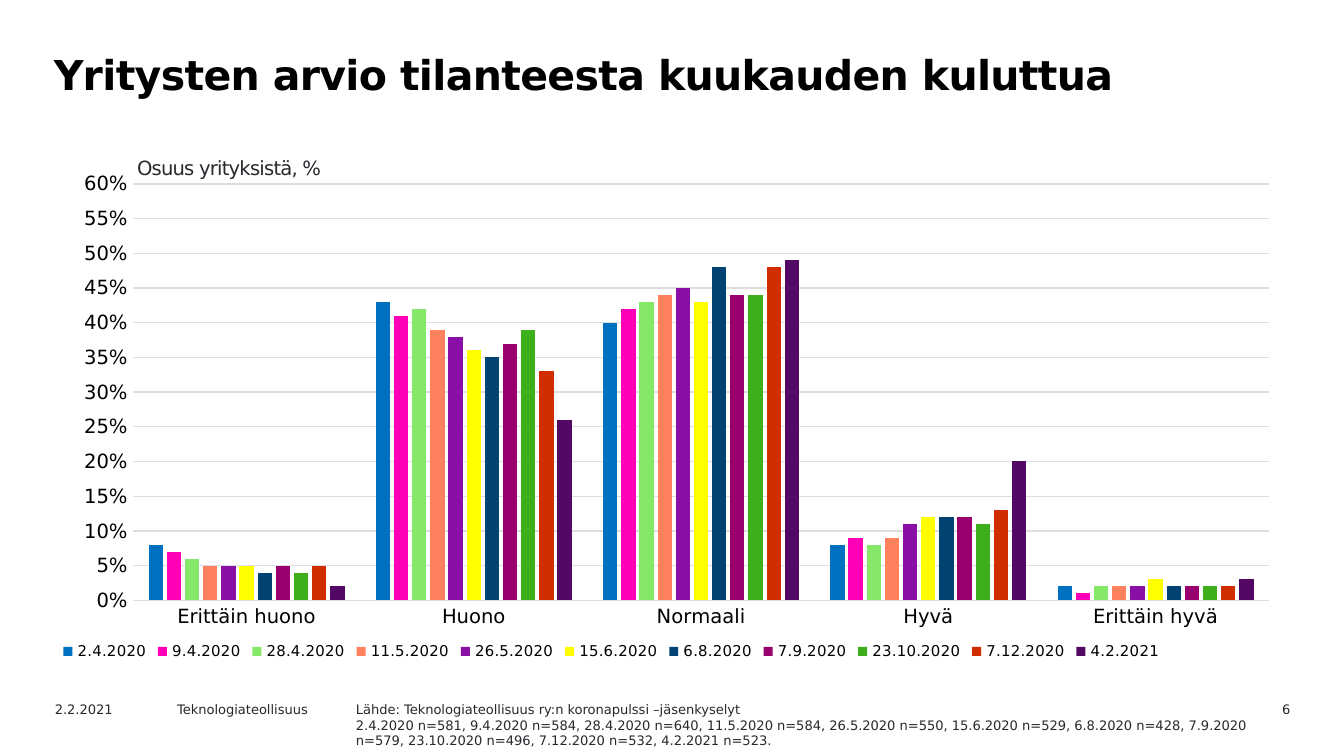
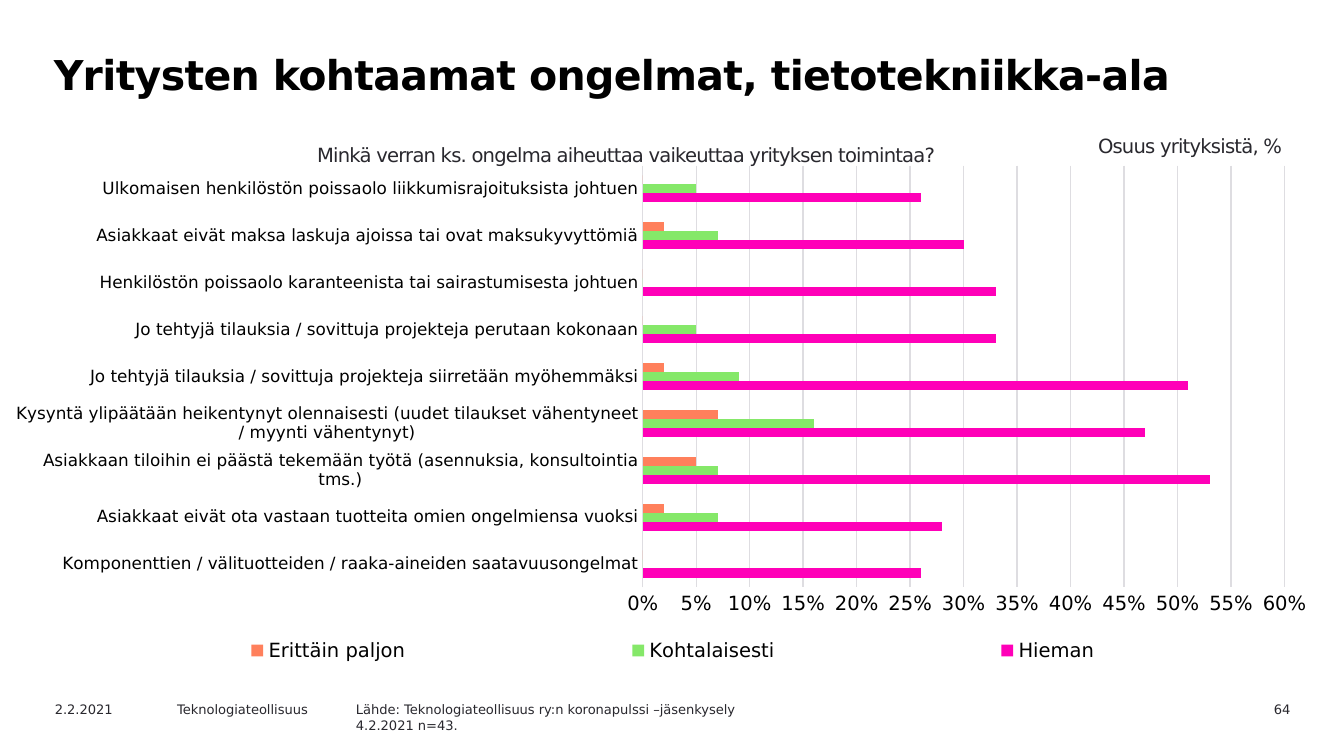
"""Build two survey slides, each with a title, a clustered bar chart and a footer."""
from lxml import etree
from pptx import Presentation
from pptx.chart.data import CategoryChartData
from pptx.dml.color import RGBColor
from pptx.enum import chart as ce, text as te
from pptx.oxml.ns import qn
from pptx.util import Inches, Pt

FONT = "DejaVu Sans"
COLORS = {
    "black": "000000", "ink": "29282E", "grid": "DEDDE1", "blue": "0070C0",
    "pink": "FF00B8", "mint": "85E869", "coral": "FF805C", "violet": "8A0FA6",
    "yellow": "FFFF00", "navy": "004373", "plum": "99006E", "green": "3CAF1B",
    "red": "D02E00", "purple": "530964",
}
DATE, SENDER = "2.2.2021", "Teknologiateollisuus"
SHARE = "Osuus yrityksistä, %"
FOOTER_TOP, FOOTER_HEIGHT = 5.17, 0.18

SLIDES = [
    {
        "title": "Yritysten arvio tilanteesta kuukauden kuluttua",
        "number": "6",
        "source": [
            "Lähde: Teknologiateollisuus ry:n koronapulssi –jäsenkyselyt",
            "2.4.2020 n=581, 9.4.2020 n=584, 28.4.2020 n=640, 11.5.2020 n=584, "
            "26.5.2020 n=550, 15.6.2020 n=529, 6.8.2020 n=428, 7.9.2020 n=579, "
            "23.10.2020 n=496, 7.12.2020 n=532, 4.2.2021 n=523.",
        ],
        "source_size": (6.86, 0.4),
        "labels": [(SHARE, (0.98, 1.12, 3.39, 0.26))],
        "chart": {
            "type": ce.XL_CHART_TYPE.COLUMN_CLUSTERED,
            "at": (0.42, 1.21, 9.18, 3.87),
            "plot": (0.062, 0.041, 0.921, 0.801),
            "legend": (0, 0.91, 0.9, 0.06),
            "overlap": -27, "category_size": 10.5, "legend_size": 8,
            "categories": ["Erittäin huono", "Huono", "Normaali", "Hyvä", "Erittäin hyvä"],
            "series": [
                ("2.4.2020", "blue", (0.08, 0.43, 0.4, 0.08, 0.02)),
                ("9.4.2020", "pink", (0.07, 0.41, 0.42, 0.09, 0.01)),
                ("28.4.2020", "mint", (0.06, 0.42, 0.43, 0.08, 0.02)),
                ("11.5.2020", "coral", (0.05, 0.39, 0.44, 0.09, 0.02)),
                ("26.5.2020", "violet", (0.05, 0.38, 0.45, 0.11, 0.02)),
                ("15.6.2020", "yellow", (0.05, 0.36, 0.43, 0.12, 0.03)),
                ("6.8.2020", "navy", (0.04, 0.35, 0.48, 0.12, 0.02)),
                ("7.9.2020", "plum", (0.05, 0.37, 0.44, 0.12, 0.02)),
                ("23.10.2020", "green", (0.04, 0.39, 0.44, 0.11, 0.02)),
                ("7.12.2020", "red", (0.05, 0.33, 0.48, 0.13, 0.02)),
                ("4.2.2021", "purple", (0.02, 0.26, 0.49, 0.2, 0.03)),
            ],
        },
    },
    {
        "title": "Yritysten kohtaamat ongelmat, tietotekniikka-ala",
        "number": "64",
        "source": [
            "Lähde: Teknologiateollisuus ry:n koronapulssi –jäsenkysely",
            "4.2.2021 n=43.",
        ],
        "source_size": (5.75, 0.45),
        "labels": [
            (SHARE, (8.13, 0.96, 1.57, 0.26)),
            ("Minkä verran ks. ongelma aiheuttaa vaikeuttaa yrityksen toimintaa?",
             (2.32, 1.02, 4.8, 0.26)),
        ],
        "chart": {
            "type": ce.XL_CHART_TYPE.BAR_CLUSTERED,
            "at": (0.12, 1.08, 9.76, 4),
            "plot": (0.477, 0.038, 0.49, 0.785),
            "legend": (0.01, 0.9, 0.98, 0.08),
            "overlap": 0, "category_size": 9, "legend_size": 10.5,
            "categories": [
                "Komponenttien / välituotteiden / raaka-aineiden saatavuusongelmat",
                "Asiakkaat eivät ota vastaan tuotteita omien ongelmiensa vuoksi",
                "Asiakkaan tiloihin ei päästä tekemään työtä (asennuksia, konsultointia tms.)",
                "Kysyntä ylipäätään heikentynyt olennaisesti "
                "(uudet tilaukset vähentyneet / myynti vähentynyt)",
                "Jo tehtyjä tilauksia / sovittuja projekteja siirretään myöhemmäksi",
                "Jo tehtyjä tilauksia / sovittuja projekteja perutaan kokonaan",
                "Henkilöstön poissaolo karanteenista tai sairastumisesta johtuen",
                "Asiakkaat eivät maksa laskuja ajoissa tai ovat maksukyvyttömiä",
                "Ulkomaisen henkilöstön poissaolo liikkumisrajoituksista johtuen",
            ],
            "series": [
                ("Hieman", "pink", (0.26, 0.28, 0.53, 0.47, 0.51, 0.33, 0.33, 0.3, 0.26)),
                ("Kohtalaisesti", "mint", (0, 0.07, 0.07, 0.16, 0.09, 0.05, 0, 0.07, 0.05)),
                ("Erittäin paljon", "coral", (0, 0.02, 0.05, 0.07, 0.02, 0, 0, 0.02, 0)),
            ],
        },
    },
]


def rgb(name):
    return RGBColor.from_string(COLORS[name])


def style_font(font, size, color, bold=False):
    font.name, font.size, font.bold = FONT, Pt(size), bold
    font.color.rgb = rgb(color)


def fill_text(tf, lines, size, color="ink", bold=False, spacing=0, align=te.PP_ALIGN.LEFT):
    tf.text = "\n".join(lines)
    tf.word_wrap = True
    tf.auto_size = te.MSO_AUTO_SIZE.NONE
    tf.vertical_anchor = te.MSO_ANCHOR.TOP
    for p in tf.paragraphs:
        p.alignment = align
        for r in p.runs:
            style_font(r.font, size, color, bold)
            if spacing:
                r.font._element.set("spc", str(spacing))


def add_text(s, at, lines, size=7, **style):
    tf = s.shapes.add_textbox(*map(Inches, at)).text_frame
    fill_text(tf, lines, size, **style)
    return tf


def add_title(s, title):
    sp = s.shapes.title
    sp.left, sp.top, sp.width, sp.height = map(Inches, (0.28, 0.31, 8.74, 0.71))
    fill_text(sp.text_frame, [title], 22, "black", bold=True, spacing=-34)
    p = sp.text_frame.paragraphs[0]
    p.line_spacing = Pt(27)
    p._p.get_or_add_pPr().set("marL", str(Inches(0.02)))


def add_label(s, label, at):
    tf = add_text(s, at, [label], 10.5, spacing=-40)
    tf.margin_left = tf.margin_right = tf.margin_top = tf.margin_bottom = Inches(0.04)
    tf.auto_size = te.MSO_AUTO_SIZE.SHAPE_TO_FIT_TEXT


def add_footer(s, number, source, source_size):
    for left, width, line, align in (
        (8.76, 0.94, number, te.PP_ALIGN.RIGHT),
        (0.31, 1, DATE, te.PP_ALIGN.LEFT),
        (1.22, 1.42, SENDER, te.PP_ALIGN.LEFT),
    ):
        add_text(s, (left, FOOTER_TOP, width, FOOTER_HEIGHT), [line], align=align)
    add_text(s, (2.55, FOOTER_TOP, *source_size), source)


def set_layout(parent, index, box, inner=False):
    for old in parent.findall(qn("c:layout")):
        parent.remove(old)
    layout = etree.Element(qn("c:layout"))
    manual = etree.SubElement(layout, qn("c:manualLayout"))
    settings = [("layoutTarget", "inner")] if inner else []
    settings += [("xMode", "edge"), ("yMode", "edge"), *zip("xywh", box)]
    for tag, value in settings:
        etree.SubElement(manual, qn(f"c:{tag}")).set("val", str(value))
    parent.insert(index, layout)


def style_axis(axis, size):
    axis.major_tick_mark = axis.minor_tick_mark = ce.XL_TICK_MARK.NONE
    style_font(axis.tick_labels.font, size, "black")


def style_line(line):
    line.color.rgb = rgb("grid")
    line.width = Pt(0.75)


def add_bars(s, spec):
    data = CategoryChartData(number_format="0%")
    data.categories = spec["categories"]
    for name, _, values in spec["series"]:
        data.add_series(name, values)
    chart = s.shapes.add_chart(spec["type"], *map(Inches, spec["at"]), data).chart
    chart.has_title = False
    style_font(chart.font, 10, "ink")

    plot = chart.plots[0]
    plot.gap_width, plot.overlap, plot.vary_by_categories = 219, spec["overlap"], False
    for series, (_, color, _) in zip(plot.series, spec["series"]):
        series.format.fill.solid()
        series.format.fill.fore_color.rgb = rgb(color)

    style_axis(chart.category_axis, spec["category_size"])
    style_line(chart.category_axis.format.line)
    axis = chart.value_axis
    style_axis(axis, 10.5)
    axis.format.line.fill.background()
    axis.minimum_scale, axis.maximum_scale, axis.major_unit = 0, 0.6, 0.05
    axis.tick_labels.number_format = "0%"
    axis.tick_labels.number_format_is_linked = False
    style_line(axis.major_gridlines.format.line)

    chart.has_legend = True
    legend = chart.legend
    legend.position = ce.XL_LEGEND_POSITION.BOTTOM
    legend.include_in_layout = False
    style_font(legend.font, spec["legend_size"], "black")
    set_layout(legend._element, 1, spec["legend"])
    set_layout(chart._chartSpace.chart.plotArea, 0, spec["plot"], inner=True)


def main():
    prs = Presentation()
    prs.slide_width = Inches(10)
    prs.slide_height = prs.slide_width * 9 // 16
    for content in SLIDES:
        s = prs.slides.add_slide(prs.slide_layouts[5])
        add_title(s, content["title"])
        add_bars(s, content["chart"])
        add_footer(s, content["number"], content["source"], content["source_size"])
        for label, at in content["labels"]:
            add_label(s, label, at)
    prs.save("out.pptx")


if __name__ == "__main__":
    main()
